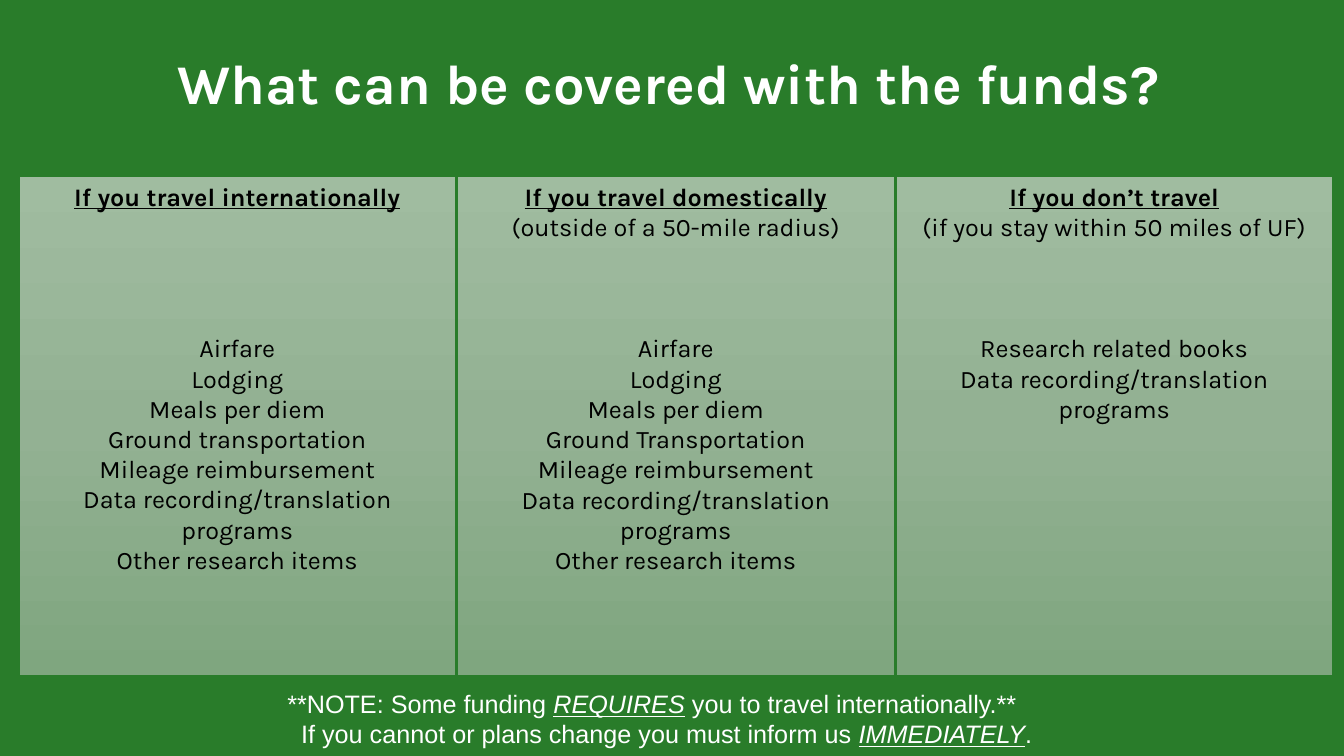
from copy import deepcopy

from pptx import Presentation
from pptx.dml.color import RGBColor
from pptx.enum.shapes import MSO_SHAPE as Shape
from pptx.enum.text import MSO_ANCHOR as Anchor, PP_ALIGN as Align
from pptx.oxml.ns import qn
from pptx.util import Cm, Pt

COLORS = {"green": "297C2A", "white": "FFFFFF", "black": "000000"}
PANEL_STOPS = {0: "A0BCA0", 0.5: "93B193", 1: "7FA67F"}
LINE_PITCH = 21.57
LIST_LINE = 5

TRAVEL_ITEMS = ["Airfare", "Lodging", "Meals per diem", "{} reimbursement",
                "Data recording/translation programs", "Other research items"]


def travel_items(ground):
    """Return the covered items for a trip, with the given ground transport wording."""
    return ["Airfare", "Lodging", "Meals per diem", ground, "Mileage reimbursement",
            "Data recording/translation programs", "Other research items"]


COLUMNS = [
    ("If you travel internationally", None, travel_items("Ground transportation")),
    ("If you travel domestically", "(outside of a 50-mile radius)",
     travel_items("Ground Transportation")),
    ("If you don’t travel", "(if you stay within 50 miles of UF)",
     ["Research related books", "Data recording/translation programs"]),
]

NOTE_LINES = [
    (0, [("**NOTE: Some funding ", False), ("REQUIRES", True),
         (" you to travel internationally.**", False)]),
    (0.35, [("If you cannot or plans change you must inform us ", False),
            ("IMMEDIATELY", True), (".", False)]),
]


def add_run(paragraph, text, font, size, color, bold=False, italic=False, underline=False):
    """Append one formatted run to a paragraph."""
    run = paragraph.add_run()
    run.text = text
    run.font.name = font
    run.font.size = Pt(size)
    run.font.bold = bold
    run.font.italic = italic
    run.font.underline = underline
    run.font.color.rgb = RGBColor.from_string(COLORS[color])


def next_paragraph(frame):
    """Return the unused first paragraph of a frame, or a new one."""
    first = frame.paragraphs[0]
    return frame.add_paragraph() if first.runs else first


def add_text_frame(slide, left, top, width, height):
    """Add a wrapping text box and return its frame."""
    frame = slide.shapes.add_textbox(Cm(left), Cm(top), Cm(width), Cm(height)).text_frame
    frame.word_wrap = True
    return frame


def add_title(slide, left, top, width, height):
    """Place the slide title in its box."""
    frame = add_text_frame(slide, left, top, width, height)
    frame.vertical_anchor = Anchor.MIDDLE
    paragraph = frame.paragraphs[0]
    paragraph.line_spacing = 0.9
    add_run(paragraph, "What can be covered with the funds?", "Karla", 40, "white", bold=True)


def fill_panel(shape):
    """Give a panel its three-stop downward gradient."""
    fill = shape.fill
    fill.gradient()
    fill.gradient_angle = 270
    stop_list = shape.element.spPr.find(qn("a:gradFill")).find(qn("a:gsLst"))
    stop_list.append(deepcopy(stop_list[0]))
    for stop, (position, color) in zip(fill.gradient_stops, PANEL_STOPS.items()):
        stop.position = position
        stop.color.rgb = RGBColor.from_string(color)


def add_panel(slide, left, top, width, height, heading, condition, items):
    """Place one column with its heading, optional condition and list of items."""
    shape = slide.shapes.add_shape(Shape.RECTANGLE, Cm(left), Cm(top), Cm(width), Cm(height))
    shape.shadow.inherit = False
    fill_panel(shape)
    shape.line.color.rgb = RGBColor.from_string(COLORS["green"])
    shape.line.width = Pt(0.5)
    frame = shape.text_frame
    frame.word_wrap = True
    frame.vertical_anchor = Anchor.TOP
    add_run(next_paragraph(frame), heading, "Karla", 18, "black", bold=True, underline=True)
    if condition:
        add_run(next_paragraph(frame), condition, "Karla", 18, "black")
    gap = (LIST_LINE - len(frame.paragraphs)) * LINE_PITCH
    for index, item in enumerate(items):
        paragraph = next_paragraph(frame)
        paragraph.space_before = Pt(0 if index else gap)
        add_run(paragraph, item, "Karla", 18, "black")
    for paragraph in frame.paragraphs:
        paragraph.alignment = Align.CENTER


def add_panels(slide, left, top, width, height, gap):
    """Spread the columns evenly across the given box."""
    panel_width = (width - gap * (len(COLUMNS) - 1)) / len(COLUMNS)
    for index, column in enumerate(COLUMNS):
        add_panel(slide, left + index * (panel_width + gap), top, panel_width, height, *column)


def add_note(slide, left, top, width, height):
    """Place the closing note with its stressed words."""
    frame = add_text_frame(slide, left, top, width, height)
    for indent, pieces in NOTE_LINES:
        paragraph = next_paragraph(frame)
        properties = paragraph._p.get_or_add_pPr()
        properties.set("marL", str(Cm(indent)))
        properties.set("indent", "0")
        for text, stressed in pieces:
            add_run(paragraph, text, "Arial", 18, "white", italic=stressed, underline=stressed)


def main():
    """Build the slide and save it."""
    presentation = Presentation()
    presentation.slide_width = Cm(33.87)
    presentation.slide_height = Cm(19.05)
    slide = presentation.slides.add_slide(presentation.slide_layouts[6])
    background = slide.background.fill
    background.solid()
    background.fore_color.rgb = RGBColor.from_string(COLORS["green"])
    add_title(slide, 4.22, 1.27, 25.4, 1.8)
    add_panels(slide, 0.48, 4.45, 33.1, 12.57, 0.05)
    add_note(slide, 6.99, 17.22, 19.71, 1.8)
    presentation.save("out.pptx")


if __name__ == "__main__":
    main()
